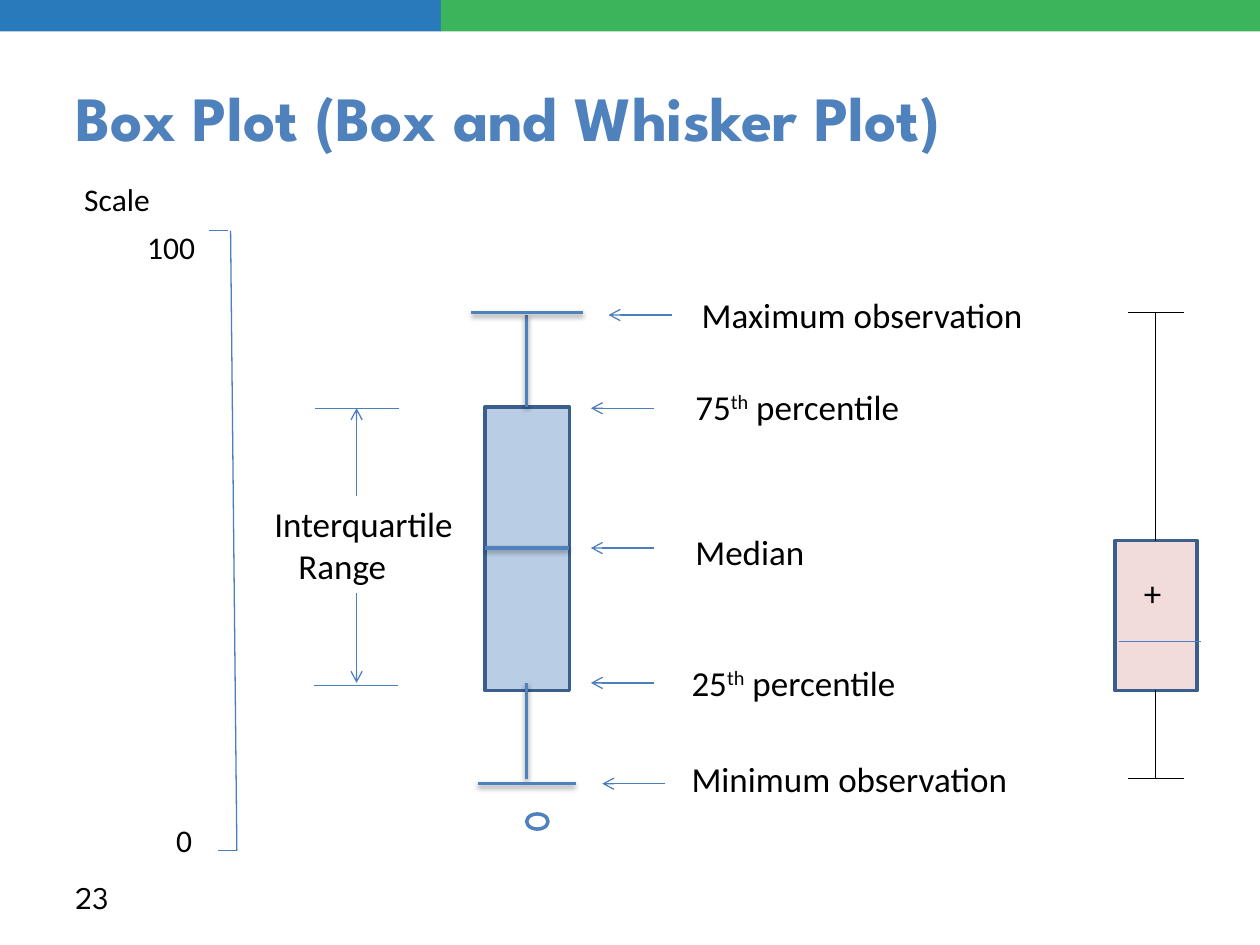
from lxml import etree
from pptx import Presentation
from pptx.dml.color import RGBColor
from pptx.enum.shapes import MSO_CONNECTOR, MSO_SHAPE
from pptx.enum.text import MSO_ANCHOR, PP_ALIGN
from pptx.oxml.ns import qn
from pptx.util import Inches, Pt

STRAIGHT = MSO_CONNECTOR.STRAIGHT
RECT, OVAL = MSO_SHAPE.RECTANGLE, MSO_SHAPE.OVAL
LEFT, MIDDLE, TOP = PP_ALIGN.LEFT, MSO_ANCHOR.MIDDLE, MSO_ANCHOR.TOP

BAND_BLUE = RGBColor(0x29, 0x7A, 0xBB)
BAND_GREEN = RGBColor(0x3C, 0xB4, 0x5C)
BLUE = RGBColor(0x4F, 0x81, 0xBD)
THIN_BLUE = RGBColor(0x4B, 0x7E, 0xBC)
EDGE = RGBColor(0x3A, 0x5F, 0x8C)
BOX_BLUE = RGBColor(0xB9, 0xCD, 0xE5)
BOX_PINK = RGBColor(0xF2, 0xDC, 0xDB)
BLACK = RGBColor(0, 0, 0)
WHITE = RGBColor(0xFF, 0xFF, 0xFF)
BODY, HEADING = "Calibri", "League Spartan"

# Content: label as (text, superscript, text), left, top, width, arrow tip x, arrow y
ARROW_LENGTH = 0.5
LABELS = [
    (("Maximum observation",), 5.47, 2.28, 2.99, 4.83, 2.5),
    (("75", "th", " percentile"), 5.42, 3.01, 2.1, 4.69, 3.24),
    (("Median",), 5.42, 4.16, 1.48, 4.69, 4.35),
    (("25", "th", " percentile"), 5.39, 5.2, 2.44, 4.69, 5.42),
    (("Minimum observation",), 5.39, 5.96, 2.86, 4.78, 6.22),
]
SCALE_LABELS = [("Scale", 0.57, 1.38, 1.08), ("100", 1.07, 1.76, 0.67),
                ("0", 1.3, 6.47, 0.36)]
SCALE_LINES = [(1.66, 1.83, 1.81, 1.83), (1.83, 1.83, 1.88, 6.75),
               (1.73, 6.75, 1.88, 6.75)]
RANGE_CAPS = [(2.5, 3.24, 3.17, 3.24), (2.49, 5.44, 3.16, 5.44)]
RANGE_ARROWS = [(2.83, 3.94, 2.83, 3.24), (2.83, 4.71, 2.83, 5.42)]
MAIN_PLOT = [
    (3.85, 4.35, 4.52, 4.35),  # median
    (4.18, 5.42, 4.18, 6.18),  # lower whisker
    (4.18, 2.5, 4.18, 3.23),   # upper whisker
    (3.74, 2.48, 4.63, 2.48),  # maximum
    (3.79, 6.22, 4.57, 6.22),  # minimum
]
SIDE_WHISKERS = [(9.17, 2.48, 9.17, 4.29), (9.17, 5.48, 9.17, 6.18),
                 (8.95, 2.48, 9.4, 2.48), (8.95, 6.18, 9.4, 6.18)]

deck = Presentation()
deck.slide_width, deck.slide_height = Inches(10), Inches(7.5)
page = deck.slides.add_slide(deck.slide_layouts[5])


def add_line(ends, color=THIN_BLUE, width=0.75, arrow=False, shadow=False):
    line = page.shapes.add_connector(STRAIGHT, *map(Inches, ends))
    line.line.color.rgb, line.line.width = color, Pt(width)
    if arrow:
        etree.SubElement(line.line._get_or_add_ln(), qn("a:tailEnd"), type="arrow")
    effects = etree.SubElement(line._element.spPr, qn("a:effectLst"))
    if shadow:
        outer = etree.SubElement(effects, qn("a:outerShdw"), blurRad=str(Pt(3.1)),
                                 dist=str(Pt(1.6)), dir="5400000", rotWithShape="0")
        tint = etree.SubElement(outer, qn("a:srgbClr"), val="000000")
        etree.SubElement(tint, qn("a:alpha"), val="38000")


def add_figure(kind, place, fill, edge=None):
    figure = page.shapes.add_shape(kind, *map(Inches, place))
    figure.shadow.inherit = False
    figure.fill.solid()
    figure.fill.fore_color.rgb = fill
    if edge is None:
        figure.line.fill.background()
    else:
        figure.line.color.rgb, figure.line.width = edge, Pt(2)


def write(box, parts, size, font=BODY, color=BLACK, bold=False, anchor=TOP):
    frame = box.text_frame
    frame.word_wrap, frame.vertical_anchor = True, anchor
    para = frame.paragraphs[0]
    para.alignment = LEFT
    formats = {"size": Pt(size), "name": font, "bold": bold}
    for index, part in enumerate(parts):
        span = para.add_run()
        span.text = part
        for name, value in formats.items():
            setattr(span.font, name, value)
        span.font.color.rgb = color
        if index == 1:
            span.font._element.set("baseline", "30000")
    return para


def add_text(parts, left, top, width, size, height=0.44, **formats):
    box = page.shapes.add_textbox(*map(Inches, (left, top, width, height)))
    return write(box, parts, size, **formats)


# Top band, title and page number
add_figure(RECT, (0, 0, 3.5, 0.25), BAND_BLUE)
add_figure(RECT, (3.5, 0, 6.5, 0.25), BAND_GREEN)
title = page.shapes.title
title.left, title.top, title.width, title.height = map(Inches, (0.5, 0.3, 9, 1.25))
write(title, ["Box Plot (Box and Whisker Plot)"], 36, HEADING, BLUE, True, MIDDLE)
add_text(["23"], 0.5, 6.92, 2.33, 18, 0.4, font=HEADING, anchor=MIDDLE)

# Scale
for ends in SCALE_LINES:
    add_line(ends)
for text, left, top, width in SCALE_LABELS:
    add_text([text], left, top, width, 18, 0.4)

# Labels with arrows
for parts, left, top, width, tip, y in LABELS:
    add_text(parts, left, top, width, 20)
    add_line((tip + ARROW_LENGTH, y, tip, y), arrow=True)

# Main box plot with outlier
add_figure(RECT, (3.85, 3.23, 0.67, 2.25), BOX_BLUE, EDGE)
for ends in MAIN_PLOT:
    add_line(ends, BLUE, 2, shadow=True)
add_figure(OVAL, (4.18, 6.46, 0.17, 0.12), WHITE, BLUE)

# Interquartile range, second line indented
for ends in RANGE_CAPS:
    add_line(ends)
for ends in RANGE_ARROWS:
    add_line(ends, arrow=True)
caption = add_text(["Interquartile Range"], 2.08, 3.94, 1.67, 20, 0.77)
layout = caption._p.get_or_add_pPr()
layout.set("marL", str(Inches(0.19)))
layout.set("indent", str(-Inches(0.19)))

# Side box plot with mean mark
add_figure(RECT, (8.85, 4.29, 0.65, 1.19), BOX_PINK, EDGE)
add_line((8.88, 5.09, 9.53, 5.09))
add_text(["+"], 8.98, 4.49, 0.45, 20)
for ends in SIDE_WHISKERS:
    add_line(ends, BLACK)

deck.save("out.pptx")
